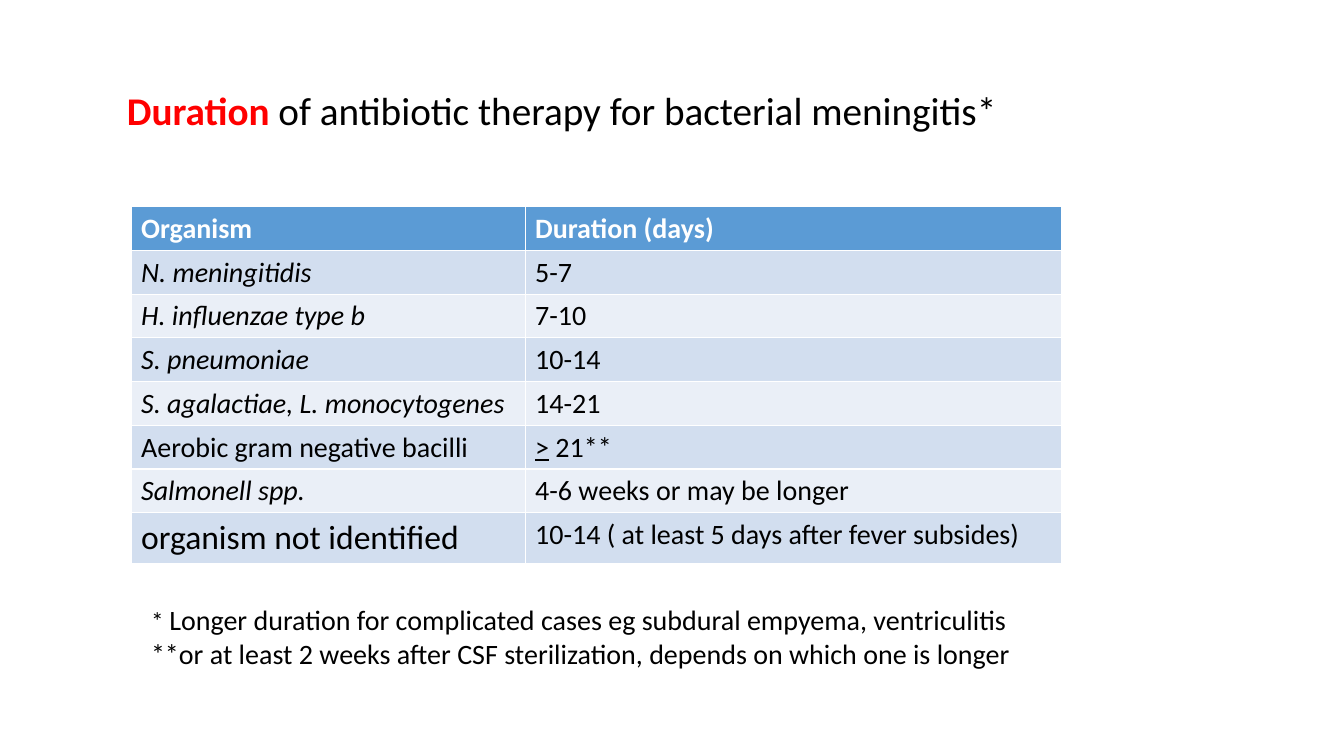
"""Build a slide on how long to treat bacterial meningitis with antibiotics."""
from dataclasses import dataclass

from pptx import Presentation
from pptx.dml.color import RGBColor
from pptx.enum.text import MSO_ANCHOR as Anchor, MSO_AUTO_SIZE as AutoSize, PP_ALIGN as Align
from pptx.util import Pt

FONT = "Calibri"
BLACK, WHITE, RED = "000000", "FFFFFF", "FF0000"
HEADER, BANDS = "5B9BD5", ("D2DEEF", "EAEFF7")
COLUMN_WIDTHS = (281.5, 383)
ROW_HEIGHT, LAST_ROW_HEIGHT = 31.2, 35.5


@dataclass(frozen=True)
class Span:
    text: str
    size: float = 20
    color: str = BLACK
    bold: bool = False
    italic: bool = False
    underline: bool = False


@dataclass(frozen=True)
class Regimen:
    organism: Span
    duration: tuple[Span, ...]


def species(name: str, days: str) -> Regimen:
    return Regimen(Span(name, italic=True), (Span(days),))


TITLE = (Span("Duration", 28, RED, bold=True),
         Span(" of antibiotic therapy for bacterial meningitis*", 28))
REGIMENS = (
    Regimen(Span("Organism", color=WHITE, bold=True),
            (Span("Duration (days)", color=WHITE, bold=True),)),
    species("N. meningitidis", "5-7"),
    species("H. influenzae type b", "7-10"),
    species("S. pneumoniae", "10-14"),
    species("S. agalactiae, L. monocytogenes", "14-21"),
    Regimen(Span("Aerobic gram negative bacilli"),
            (Span(">", underline=True), Span(" 21**"))),
    species("Salmonell spp.", "4-6 weeks or may be longer"),
    Regimen(Span("organism not identified", 24),
            (Span("10-14 ( at least 5 days after fever subsides)"),)),
)
FOOTNOTES = (
    (Span("* ", 18),
     Span("Longer duration for complicated cases eg subdural empyema, ventriculitis")),
    (Span("**or at least 2 weeks after CSF sterilization, depends on which one is longer"),),
)


def rgb(value: str) -> RGBColor:
    return RGBColor.from_string(value)


def write(p, spans: tuple[Span, ...]) -> None:
    p.alignment = Align.LEFT
    for span in spans:
        r = p.add_run()
        r.text = span.text
        font = r.font
        font.name, font.size = FONT, Pt(span.size)
        font.bold, font.italic, font.underline = span.bold, span.italic, span.underline
        font.color.rgb = rgb(span.color)


def place(sp, left: float, top: float, width: float, height: float) -> None:
    sp.left, sp.top, sp.width, sp.height = Pt(left), Pt(top), Pt(width), Pt(height)
    tf = sp.text_frame
    tf.word_wrap = False
    tf.auto_size = AutoSize.SHAPE_TO_FIT_TEXT
    tf.vertical_anchor = Anchor.TOP


def add_title(s) -> None:
    sp = s.shapes.title
    place(sp, 83.5, 58.3, 643, 41)
    write(sp.text_frame.paragraphs[0], TITLE)


def add_regimens(s) -> None:
    height = ROW_HEIGHT * (len(REGIMENS) - 1) + LAST_ROW_HEIGHT
    table = s.shapes.add_table(len(REGIMENS), len(COLUMN_WIDTHS), Pt(93.6), Pt(147.6),
                               Pt(sum(COLUMN_WIDTHS)), Pt(height)).table
    for column, width in zip(table.columns, COLUMN_WIDTHS):
        column.width = Pt(width)
    for i, regimen in enumerate(REGIMENS):
        table.rows[i].height = Pt(ROW_HEIGHT)
        for j, spans in enumerate(((regimen.organism,), regimen.duration)):
            cell = table.cell(i, j)
            cell.fill.solid()
            cell.fill.fore_color.rgb = rgb(BANDS[(i - 1) % 2] if i else HEADER)
            write(cell.text_frame.paragraphs[0], spans)
    table.rows[len(REGIMENS) - 1].height = Pt(LAST_ROW_HEIGHT)


def add_footnotes(s) -> None:
    sp = s.shapes.add_textbox(0, 0, 0, 0)
    place(sp, 100.8, 427, 635, 55.4)
    tf = sp.text_frame
    for i, spans in enumerate(FOOTNOTES):
        write(tf.add_paragraph() if i else tf.paragraphs[0], spans)


def main() -> None:
    prs = Presentation()
    prs.slide_width, prs.slide_height = Pt(960), Pt(540)
    s = prs.slides.add_slide(prs.slide_layouts[5])
    add_title(s)
    add_regimens(s)
    add_footnotes(s)
    prs.save("out.pptx")


if __name__ == "__main__":
    main()
